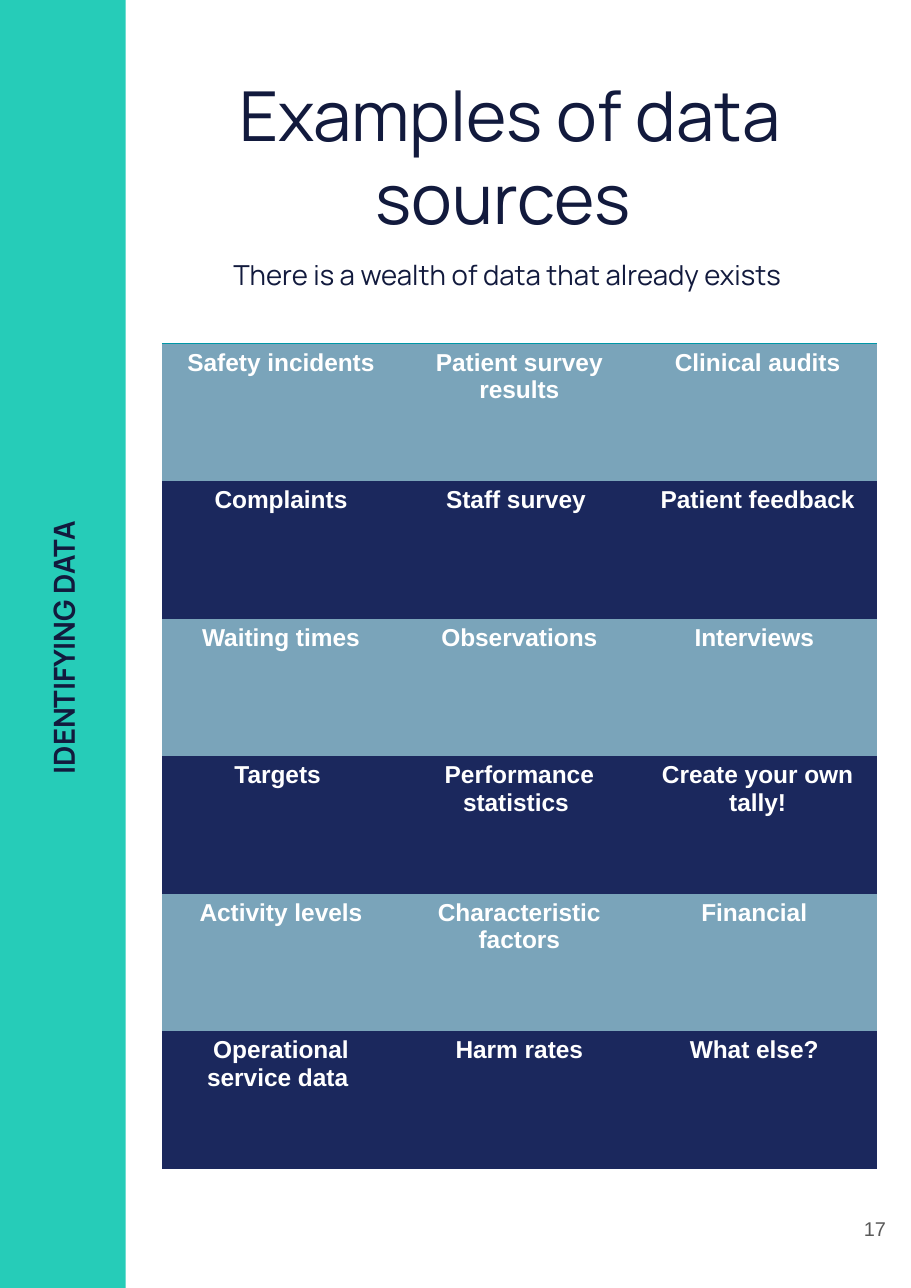
from dataclasses import dataclass

from lxml.etree import SubElement
from pptx import Presentation
from pptx.dml.color import RGBColor
from pptx.enum.shapes import MSO_SHAPE
from pptx.enum.text import MSO_ANCHOR, PP_ALIGN
from pptx.oxml.ns import qn
from pptx.util import Pt


@dataclass(frozen=True)
class Theme:
    teal: str = "26CCB8"
    ink: str = "121A3D"
    light_row: str = "7AA4BA"
    dark_row: str = "1B285D"
    rule: str = "0097A7"
    white: str = "FFFFFF"
    grey: str = "595959"
    heading_font: str = "Manrope"
    body_font: str = "Arial"
    title_size: float = 45
    subtitle_size: float = 18
    sidebar_size: float = 19
    cell_size: float = 16
    number_size: float = 13


class PageBuilder:
    def __init__(self, page, theme):
        self.page = page
        self.theme = theme

    def style(self, paragraph, text, font, size, color, bold=False, align=PP_ALIGN.CENTER):
        paragraph.text = text
        paragraph.alignment = align
        paragraph.font.name = font
        paragraph.font.size = Pt(size)
        paragraph.font.bold = bold
        paragraph.font.color.rgb = RGBColor.from_string(color)

    def rectangle(self, left, top, width, height, color):
        shape = self.page.shapes.add_shape(
            MSO_SHAPE.RECTANGLE, Pt(left), Pt(top), Pt(width), Pt(height))
        shape.shadow.inherit = False
        shape.fill.solid()
        shape.fill.fore_color.rgb = RGBColor.from_string(color)
        shape.line.fill.background()

    def text_box(self, left, top, width, height, inset=7.2, rotation=0):
        box = self.page.shapes.add_textbox(Pt(left), Pt(top), Pt(width), Pt(height))
        box.rotation = rotation
        frame = box.text_frame
        frame.word_wrap = True
        frame.margin_left = frame.margin_right = Pt(inset)
        frame.margin_top = frame.margin_bottom = Pt(inset)
        return frame

    def borders(self, cell, top_color=None):
        """Clear every border of the cell, save for an optional top rule."""
        properties = cell._tc.get_or_add_tcPr()
        for side in ("lnL", "lnR", "lnT", "lnB"):
            line = SubElement(properties, qn(f"a:{side}"), w=str(Pt(1)))
            if side == "lnT" and top_color:
                fill = SubElement(line, qn("a:solidFill"))
                SubElement(fill, qn("a:srgbClr"), val=top_color)
            else:
                SubElement(line, qn("a:noFill"))

    def table(self, left, top, width, height, rows):
        theme = self.theme
        table = self.page.shapes.add_table(
            len(rows), len(rows[0]), Pt(left), Pt(top), Pt(width), Pt(height)).table
        for row_index, texts in enumerate(rows):
            table.rows[row_index].height = Pt(height / len(rows))
            row_color = theme.dark_row if row_index % 2 else theme.light_row
            for column_index, text in enumerate(texts):
                cell = table.cell(row_index, column_index)
                self.borders(cell, None if row_index else theme.rule)
                cell.fill.solid()
                cell.fill.fore_color.rgb = RGBColor.from_string(row_color)
                self.style(cell.text_frame.paragraphs[0], text, theme.body_font,
                           theme.cell_size, theme.white, bold=True)


DATA_SOURCES = [
    ("Safety incidents", "Patient survey results", "Clinical audits"),
    ("Complaints", "Staff survey ", "Patient feedback"),
    ("Waiting times", "Observations", "Interviews "),
    ("Targets ", "Performance statistics ", "Create your own tally!"),
    ("Activity levels", "Characteristic factors", "Financial "),
    ("Operational service data ", "Harm rates", "What else? "),
]


def main():
    theme = Theme()
    deck = Presentation()
    deck.slide_width, deck.slide_height = Pt(595.44), Pt(841.68)
    builder = PageBuilder(deck.slides.add_slide(deck.slide_layouts[6]), theme)

    builder.rectangle(-2.9, 0, 85, 841.68, theme.teal)

    heading = builder.text_box(82, 40.3, 502.6, 159)
    builder.style(heading.paragraphs[0], "Examples of data sources ",
                  theme.heading_font, theme.title_size, theme.ink)
    subtitle = heading.add_paragraph()
    builder.style(subtitle, "There is a wealth of data that already exists ",
                  theme.heading_font, theme.subtitle_size, theme.ink)
    subtitle.line_spacing = 1.15
    subtitle.space_before = Pt(10)

    sidebar = builder.text_box(-339.8, 402.5, 762.5, 37.4, rotation=270)
    builder.style(sidebar.paragraphs[0], "IDENTIFYING DATA ", theme.heading_font,
                  theme.sidebar_size, theme.ink, bold=True)

    builder.table(105.8, 224.6, 467.3, 539.4, DATA_SOURCES)

    number = builder.text_box(552.2, 771.1, 36, 64.1, inset=9.1)
    number.vertical_anchor = MSO_ANCHOR.MIDDLE
    builder.style(number.paragraphs[0], "17", theme.body_font, theme.number_size,
                  theme.grey, align=PP_ALIGN.RIGHT)

    deck.save("out.pptx")


if __name__ == "__main__":
    main()
